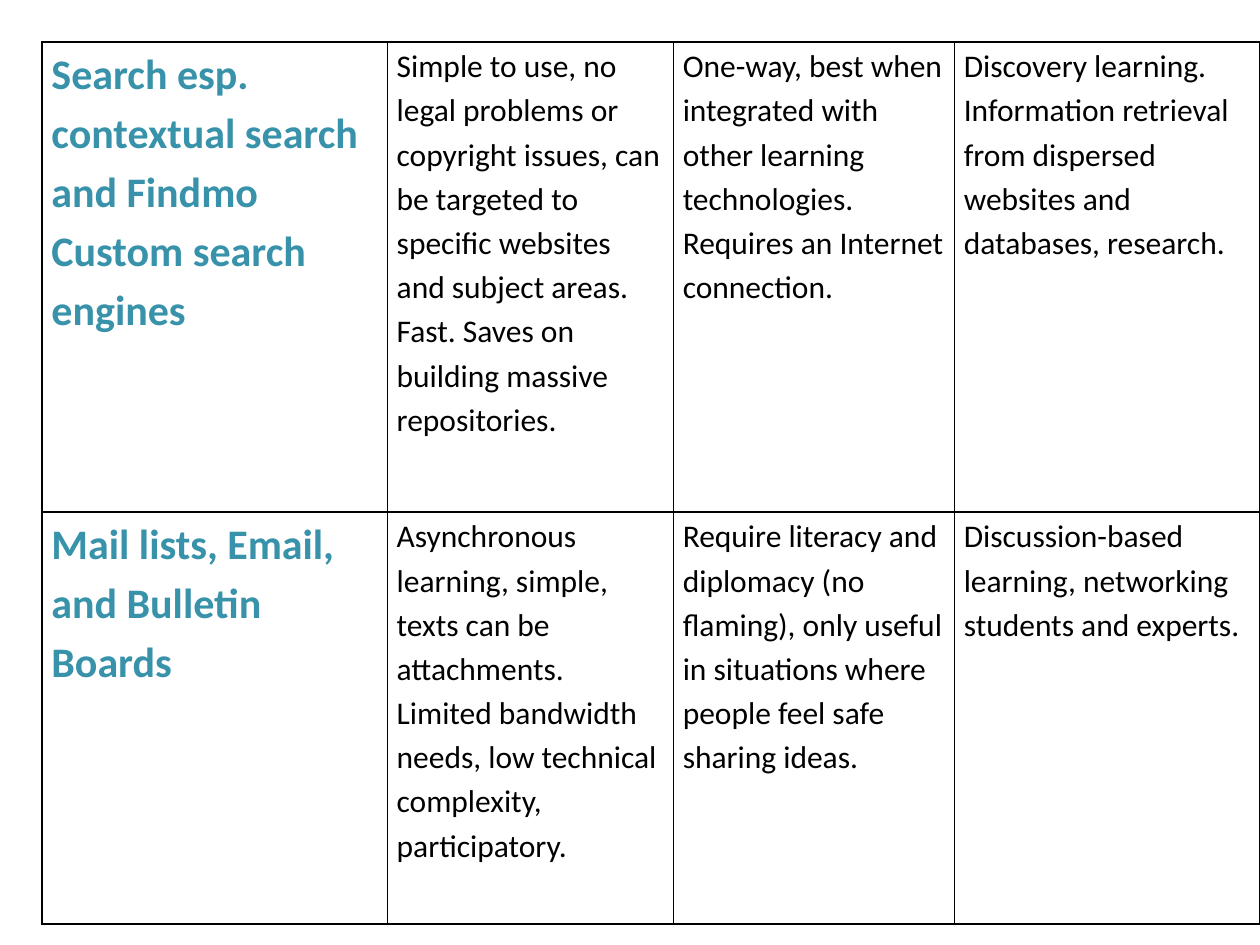
from lxml.etree import SubElement
from pptx import Presentation
from pptx.dml.color import RGBColor as Rgb
from pptx.enum.text import MSO_ANCHOR as Anchor, PP_ALIGN as Align
from pptx.oxml.ns import qn
from pptx.util import Pt

FONT = "Calibri"
BLACK, TEAL, WHITE = "000000", "3792AA", "FFFFFF"
COLUMN_WIDTHS = [197.3, 163.5, 160.6, 174.4]
ROW_HEIGHTS = [268.6, 235.4]

# Each row: tool, strengths, weaknesses, uses
TOOLS = [
    [
        "Search esp. contextual search and Findmo Custom search engines",
        "Simple to use, no legal problems or copyright issues, can be targeted to "
        "specific websites and subject areas. Fast. Saves on building massive repositories.",
        "One-way, best when integrated with other learning technologies. "
        "Requires an Internet connection.",
        "Discovery learning. Information retrieval from dispersed websites and "
        "databases, research.",
    ],
    [
        "Mail lists, Email, and Bulletin Boards",
        "Asynchronous learning, simple, texts can be attachments. Limited bandwidth "
        "needs, low technical complexity, participatory.",
        "Require literacy and diplomacy (no flaming), only useful in situations "
        "where people feel safe sharing ideas.",
        "Discussion-based learning, networking students and experts.",
    ],
]


def color(hex_code):
    return Rgb.from_string(hex_code)


def add_borders(cell, hex_code, width):
    properties = cell._tc.get_or_add_tcPr()
    for position, side in enumerate(("lnL", "lnR", "lnT", "lnB")):
        line = properties.makeelement(qn(f"a:{side}"), {"w": str(Pt(width))})
        fill = SubElement(line, qn("a:solidFill"))
        SubElement(fill, qn("a:srgbClr"), val=hex_code)
        # Borders must come before the cell fill
        properties.insert(position, line)


def fill_cell(cell, text, size, hex_code, bold):
    cell.fill.solid()
    cell.fill.fore_color.rgb = color(WHITE)
    add_borders(cell, BLACK, 1)
    cell.margin_left = cell.margin_right = Pt(5.4)
    cell.margin_top = cell.margin_bottom = Pt(0)
    cell.vertical_anchor = Anchor.TOP
    cell.text_frame.text = text
    para = cell.text_frame.paragraphs[0]
    para.alignment = Align.LEFT
    para.line_spacing = 1.15
    font = para.runs[0].font
    font.name, font.size, font.bold = FONT, Pt(size), bold
    font.color.rgb = color(hex_code)


def add_tool_table(page):
    frame = page.shapes.add_table(
        len(ROW_HEIGHTS), len(COLUMN_WIDTHS), Pt(24), Pt(24),
        Pt(sum(COLUMN_WIDTHS)), Pt(sum(ROW_HEIGHTS)),
    )
    table = frame.table
    table.first_row = table.horz_banding = False
    for column, width in zip(table.columns, COLUMN_WIDTHS):
        column.width = Pt(width)
    for row, height, texts in zip(table.rows, ROW_HEIGHTS, TOOLS):
        row.height = Pt(height)
        # The first column names the tool
        for index, (cell, text) in enumerate(zip(row.cells, texts)):
            if index == 0:
                fill_cell(cell, text, 24, TEAL, True)
            else:
                fill_cell(cell, text, 18, BLACK, False)


def main():
    deck = Presentation()
    deck.slide_width, deck.slide_height = Pt(720), Pt(540)
    page = deck.slides.add_slide(deck.slide_layouts[6])
    add_tool_table(page)
    deck.save("out.pptx")


if __name__ == "__main__":
    main()
